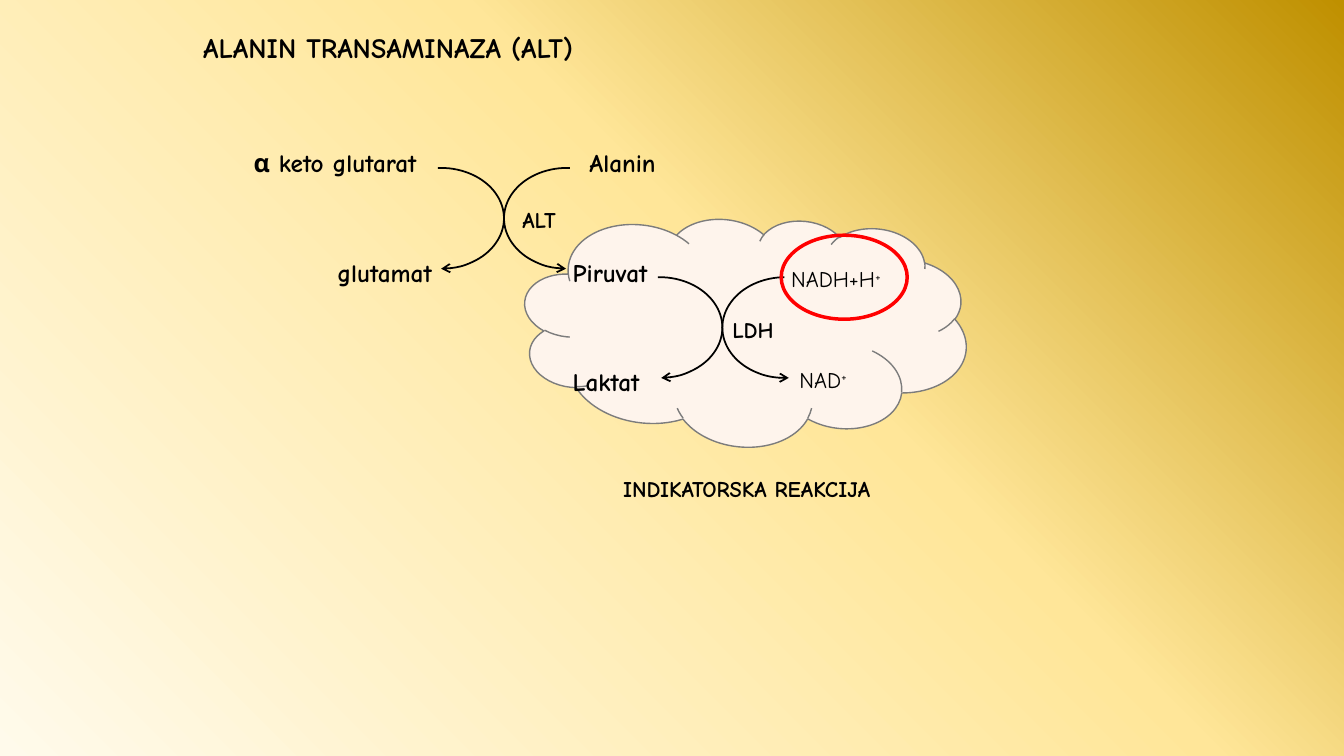
from dataclasses import dataclass

from lxml import etree
from pptx import Presentation
from pptx import util as u
from pptx.dml import color
from pptx.enum import shapes, text
from pptx.oxml import ns, parse_xml

COLUMNS, ROWS = 160, 90
WIDTH, HEIGHT = u.Inches(13.333), u.Inches(7.5)


@dataclass(frozen=True)
class Theme:
    """Colours, font and sizes of the slide."""
    font: str = "Comic Neue"
    ink: str = "000000"
    cloud: str = "FEF4EC"
    cloud_line: str = "7C7C7C"
    highlight: str = "FF0000"
    background: tuple = ((0, "FFFAEB"), (58, "FFE699"), (100, "BF9000"))
    background_angle: int = 315
    title: int = 20
    substance: int = 18
    note: int = 16
    arrow_width: float = 1.25


THEME = Theme()


def grid(left, top, width, height):
    """Turn columns and rows into slide lengths."""
    return (int(left * WIDTH / COLUMNS), int(top * HEIGHT / ROWS),
            int(width * WIDTH / COLUMNS), int(height * HEIGHT / ROWS))


def add_text(slide, words, box, size=THEME.substance, bold=True, wrap=False, superscript=""):
    """Write one line of text, with an optional raised ending."""
    frame = slide.shapes.add_textbox(*grid(*box)).text_frame
    frame.word_wrap = wrap
    frame.auto_size = text.MSO_AUTO_SIZE.SHAPE_TO_FIT_TEXT
    for part, baseline in ((words, 0), (superscript, 30000)):
        if not part:
            continue
        run = frame.paragraphs[0].add_run()
        run.text = part
        run.font.name = THEME.font
        run.font.size = u.Pt(size)
        run.font.bold = bold
        run.font.color.rgb = color.RGBColor.from_string(THEME.ink)
        if baseline:
            run.font._element.set("baseline", str(baseline))


def add_outline(slide, kind, box, line, width, fill=None):
    """Draw a preset shape with a line and an optional fill."""
    shape = slide.shapes.add_shape(kind, *grid(*box))
    shape.shadow.inherit = False
    if fill:
        shape.fill.solid()
        shape.fill.fore_color.rgb = color.RGBColor.from_string(fill)
    else:
        shape.fill.background()
    shape.line.color.rgb = color.RGBColor.from_string(line)
    shape.line.width = u.Pt(width)
    return shape


def add_arc_arrow(slide, box, start, end, arrow_end):
    """Draw an arc between two angles with an arrowhead at one end."""
    arc = add_outline(slide, shapes.MSO_SHAPE.ARC, box, THEME.ink, THEME.arrow_width)
    for index, degrees in enumerate((start, end)):
        arc.adjustments[index] = degrees * 0.6
    etree.SubElement(arc.line._get_or_add_ln(), ns.qn(f"a:{arrow_end}"), type="arrow")


def add_crossing(slide, box, left_angles, right_angles):
    """Draw two arcs that touch in the middle of the box."""
    left, top, width, height = box
    half = width / 2
    add_arc_arrow(slide, (left, top, half, height), *left_angles, "tailEnd")
    add_arc_arrow(slide, (left + half, top, half, height), *right_angles, "headEnd")


def add_labels(slide, box, labels):
    """Place labels by their offset from the corner of the box."""
    left, top = box[:2]
    for words, across, down, width, style in labels:
        add_text(slide, words, (left + across, top + down, width, 4.6), **style)


def add_background(slide):
    """Fill the slide with the diagonal gradient."""
    stops = "".join(f'<a:gs pos="{position * 1000}"><a:srgbClr val="{value}"/></a:gs>'
                    for position, value in THEME.background)
    background = parse_xml(
        f'<p:bg {ns.nsdecls("p", "a")}><p:bgPr><a:gradFill rotWithShape="1">'
        f'<a:gsLst>{stops}</a:gsLst><a:lin ang="{THEME.background_angle * 60000}" scaled="1"/>'
        '</a:gradFill><a:effectLst/></p:bgPr></p:bg>')
    slide.element.cSld.insert(0, background)


def add_transamination(slide, box):
    """Draw the ALT reaction."""
    add_crossing(slide, box, (266.5, 89.9), (91.1, 273.3))
    add_labels(slide, box, (
        ("α keto glutarat", -16, -3, 24.6, {}),
        ("Alanin", 24, -3, 11, {}),
        ("glutamat", -6, 10, 14.9, {}),
        ("ALT", 16, 4, 7.8, {"size": THEME.note}),
    ))


def add_indicator_reaction(slide, box):
    """Draw the LDH reaction in its cloud, with NADH ringed."""
    left, top = box[:2]
    cloud = add_outline(slide, shapes.MSO_SHAPE.CLOUD, (left - 8.7, top - 7.4, 52.8, 27.5),
                        THEME.cloud_line, 1, THEME.cloud)
    cloud.rotation = 5.9
    add_crossing(slide, box, (268.3, 87.9), (86.1, 268.8))
    coenzyme = {"size": THEME.note, "bold": False, "superscript": "+"}
    add_labels(slide, box, (
        ("Piruvat", -4, -3, 12.4, {}),
        ("Laktat", -4, 10, 11.9, {}),
        ("NADH+H", 22, -2, 15.2, coenzyme),
        ("NAD", 23, 10, 9.4, coenzyme),
        ("LDH", 15, 4, 7.9, {"size": THEME.note}),
        ("INDIKATORSKA REAKCIJA", 2, 23, 39.5, {"size": THEME.note}),
    ))
    add_outline(slide, shapes.MSO_SHAPE.OVAL, (left + 22, top - 5, 15, 10), THEME.highlight, 2.5)


def main():
    """Build and save the slide."""
    presentation = Presentation()
    presentation.slide_width, presentation.slide_height = WIDTH, HEIGHT
    slide = presentation.slides.add_slide(presentation.slide_layouts[6])
    add_background(slide)
    add_text(slide, "ALANIN TRANSAMINAZA (ALT)", (23, 3, 60, 5.3), size=THEME.title, wrap=True)
    add_indicator_reaction(slide, (71, 33, 30, 12))
    add_transamination(slide, (45, 20, 30, 12))
    presentation.save("out.pptx")


if __name__ == "__main__":
    main()
